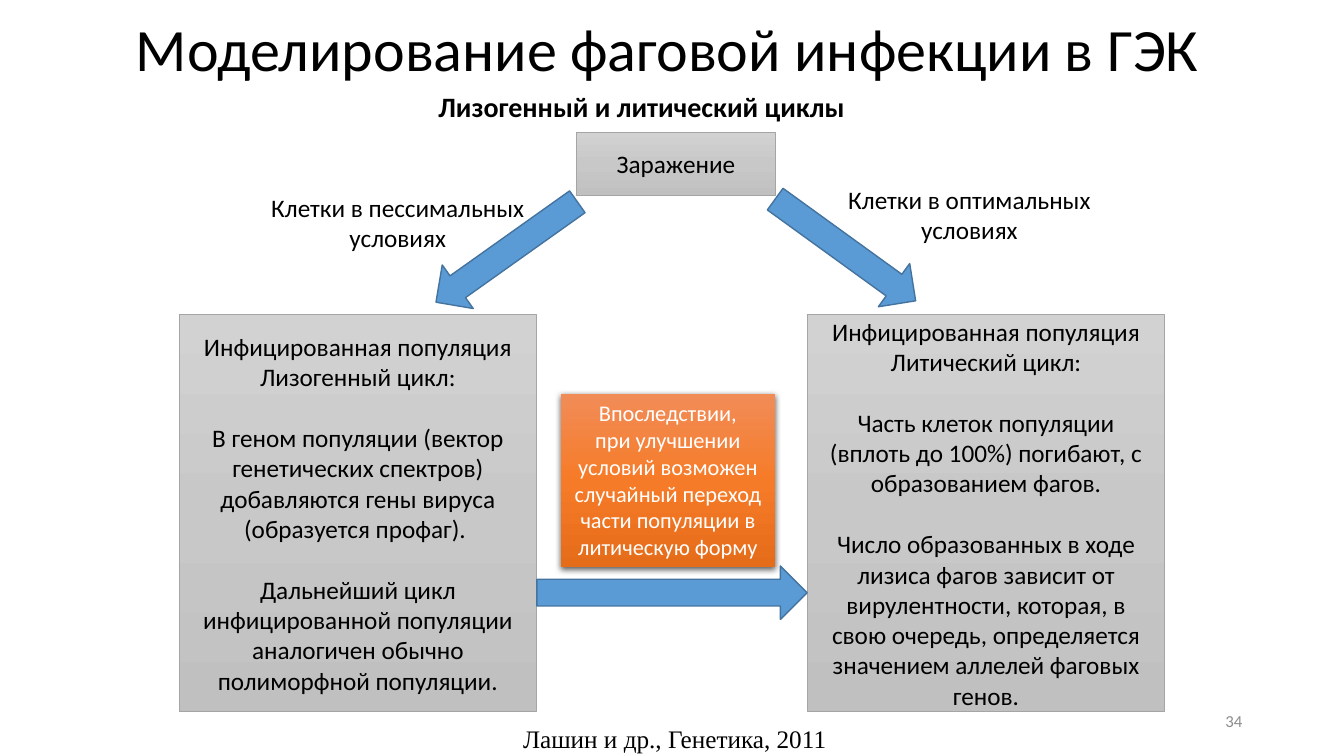
"""Builds the slide on modelling phage infection with its two cycles."""
from copy import deepcopy

from lxml import etree
from pptx import Presentation
from pptx.dml.color import RGBColor
from pptx.enum import shapes, text
from pptx.oxml import ns
from pptx.util import Inches, Pt

BLACK = RGBColor(0x00, 0x00, 0x00)
WHITE = RGBColor(0xFF, 0xFF, 0xFF)
PAGE_GREY = RGBColor(0x8C, 0x8C, 0x8C)
EDGE_GREY = RGBColor(0xA5, 0xA5, 0xA5)
BLUE = RGBColor(0x5B, 0x9B, 0xD5)
DARK_BLUE = RGBColor(0x43, 0x73, 0x9E)
GREYS = [RGBColor(0xD2, 0xD2, 0xD2), RGBColor(0xC8, 0xC8, 0xC8), RGBColor(0xC0, 0xC0, 0xC0)]
ORANGES = [RGBColor(0xF1, 0x8C, 0x57), RGBColor(0xF6, 0x7B, 0x28), RGBColor(0xE5, 0x6C, 0x19)]

CENTER = text.PP_ALIGN.CENTER
MIDDLE = text.MSO_ANCHOR.MIDDLE
BLOCK_GAP = 22

LYSOGENIC = [
    "Инфицированная популяция",
    "Лизогенный цикл:",
    "В геном популяции (вектор генетических спектров) добавляются гены вируса (образуется профаг). ",
    "Дальнейший цикл инфицированной популяции аналогичен обычно полиморфной популяции.",
]
LYTIC = [
    "Инфицированная популяция",
    "Литический цикл:",
    "Часть клеток популяции (вплоть до 100%) погибают, с образованием фагов.",
    "Число образованных в ходе лизиса фагов зависит от вирулентности, которая, "
    "в свою очередь, определяется значением аллелей фаговых генов.",
]
TRANSITION = [
    "Впоследствии,",
    "при улучшении условий возможен случайный переход части популяции в литическую форму",
]


def write(shape, lines, size=18, color=BLACK, font="Calibri", bold=False, align=text.PP_ALIGN.LEFT,
          anchor=text.MSO_ANCHOR.TOP, wrap=True, gap_from=None, spacing=None):
    """Fill a shape with paragraphs, spacing out those from index gap_from on."""
    frame = shape.text_frame
    frame.word_wrap = wrap
    frame.vertical_anchor = anchor
    for index, line in enumerate(lines):
        para = frame.add_paragraph() if index else frame.paragraphs[0]
        para.alignment = align
        if gap_from and index >= gap_from:
            para.space_before = Pt(BLOCK_GAP)
        if spacing:
            para.line_spacing = spacing
        span = para.add_run()
        span.text = line
        span.font.name = font
        span.font.size = Pt(size)
        span.font.bold = bold
        span.font.color.rgb = color


def add_label(page, line, left, top, width, height, **style):
    """Add a text box with one paragraph."""
    box = page.shapes.add_textbox(Inches(left), Inches(top), Inches(width), Inches(height))
    write(box, [line], **style)


def add_panel(page, lines, left, top, width, height, colors, edge=None, **style):
    """Add a rectangle with a three-step vertical gradient and centred text."""
    panel = page.shapes.add_shape(shapes.MSO_SHAPE.RECTANGLE, Inches(left), Inches(top),
                                  Inches(width), Inches(height))
    panel.shadow.inherit = False
    panel.fill.gradient()
    panel.fill.gradient_angle = 270
    first = panel._element.spPr.find(".//" + ns.qn("a:gs"))
    first.addnext(deepcopy(first))
    for index, (stop, color) in enumerate(zip(panel.fill.gradient_stops, colors)):
        stop.position = index / 2
        stop.color.rgb = color
    if edge:
        panel.line.color.rgb = edge
        panel.line.width = Pt(0.5)
    else:
        panel.line.fill.background()
    write(panel, lines, align=CENTER, **style)
    return panel


def add_drop_shadow(shape):
    """Give a shape a soft black shadow below it."""
    effects = shape._element.spPr.find(ns.qn("a:effectLst"))
    shadow = etree.SubElement(effects, ns.qn("a:outerShdw"), blurRad=str(Pt(4.5)),
                              dist=str(Pt(1.5)), dir="5400000", algn="ctr", rotWithShape="0")
    color = etree.SubElement(shadow, ns.qn("a:srgbClr"), val=str(BLACK))
    etree.SubElement(color, ns.qn("a:alpha"), val="63000")


def add_arrow(page, left, top, length, rotation):
    """Add a blue block arrow turned clockwise from pointing up."""
    arrow = page.shapes.add_shape(shapes.MSO_SHAPE.UP_ARROW, Inches(left), Inches(top),
                                  Inches(0.53), Inches(length))
    arrow.rotation = rotation
    arrow.shadow.inherit = False
    arrow.fill.solid()
    arrow.fill.fore_color.rgb = BLUE
    arrow.line.color.rgb = DARK_BLUE
    arrow.line.width = Pt(1)


def main():
    """Build and save the slide."""
    deck = Presentation()
    deck.slide_width, deck.slide_height = Inches(13.33), Inches(7.5)
    page = deck.slides.add_slide(deck.slide_layouts[6])

    add_label(page, "Моделирование фаговой инфекции в ГЭК", 1.25, -0.19, 12.56, 1.41,
              size=42.9, anchor=MIDDLE, spacing=0.9)
    add_label(page, "Лизогенный и литический циклы", 4.25, 0.84, 4.26, 0.44,
              size=20, bold=True, wrap=False)

    add_panel(page, ["Заражение"], 5.72, 1.31, 1.97, 0.63, GREYS, EDGE_GREY, anchor=MIDDLE)
    add_arrow(page, 4.76, 1.64, 1.72, 234.6)
    add_arrow(page, 8.12, 1.62, 1.72, 125.9)
    add_label(page, "Клетки в пессимальных условиях", 2.41, 1.86, 3.07, 0.71, align=CENTER)
    add_label(page, "Клетки в оптимальных условиях", 8.08, 1.78, 3.07, 0.71, align=CENTER)

    for left, lines in ((1.78, LYSOGENIC), (8.01, LYTIC)):
        add_panel(page, lines, left, 3.12, 3.54, 3.94, GREYS, EDGE_GREY, anchor=MIDDLE, gap_from=2)
    add_arrow(page, 6.4, 4.54, 2.68, 90)
    transition = add_panel(page, TRANSITION, 5.56, 3.91, 2.13, 1.72, ORANGES, size=16, color=WHITE)
    add_drop_shadow(transition)

    add_label(page, "Лашин и др., Генетика, 2011", 5.09, 7.13, 3.74, 0.4, font="Times New Roman")
    add_label(page, "34", 9.42, 6.95, 3, 0.4, size=12, color=PAGE_GREY,
              align=text.PP_ALIGN.RIGHT, anchor=MIDDLE)
    deck.save("out.pptx")


if __name__ == "__main__":
    main()
